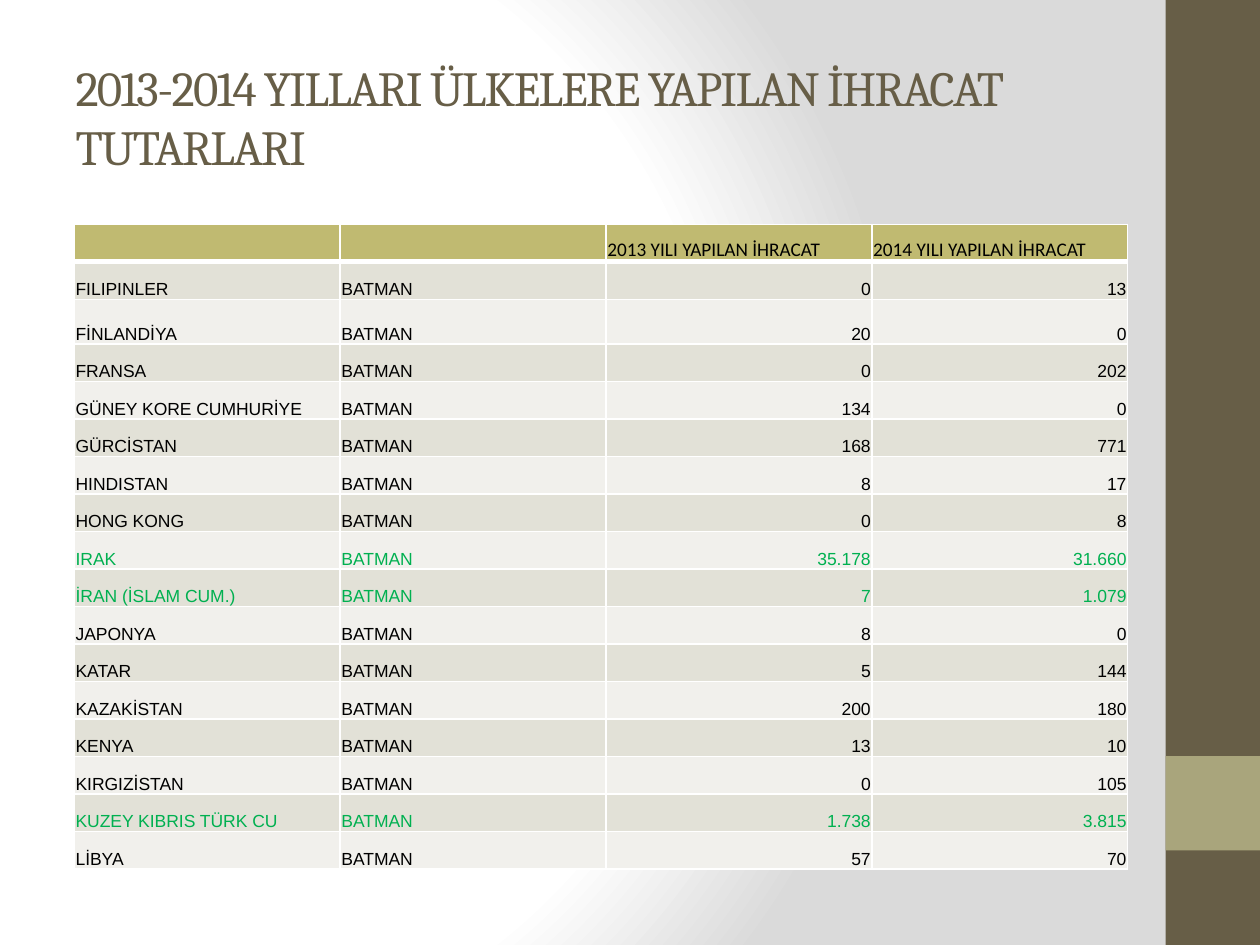
from dataclasses import dataclass

from lxml.etree import SubElement
from pptx import Presentation
from pptx.dml.color import RGBColor
from pptx.enum.shapes import MSO_SHAPE as Shape
from pptx.enum.text import MSO_ANCHOR as Anchor, PP_ALIGN as Align
from pptx.oxml import parse_xml
from pptx.oxml.ns import nsdecls, qn
from pptx.util import Inches, Pt


@dataclass(frozen=True)
class Theme:
    brown: str = "675E47"
    sage: str = "A9A57C"
    header: str = "C0BA71"
    bands: tuple = ("E2E1D7", "F1F0EC")
    white: str = "FFFFFF"
    grey: str = "DADADA"
    text: str = "000000"
    highlight: str = "00B050"
    title_font: str = "Cambria"
    header_font: str = "Calibri"
    body_font: str = "Arial"
    title_size: int = 28
    header_size: int = 11
    body_size: int = 10


class Deck:
    UNIT = 0.25

    def __init__(self, theme):
        self.theme = theme
        self.prs = Presentation()
        self.prs.slide_width, self.prs.slide_height = self.grid(40, 30)
        self.s = self.prs.slides.add_slide(self.prs.slide_layouts[5])

    def grid(self, *units):
        return [Inches(u * self.UNIT) for u in units]

    def font(self, run, name, size, color):
        f = run.font
        f.name, f.size, f.bold = name, Pt(size), False
        f.color.rgb = RGBColor.from_string(color)

    def background(self):
        t = self.theme
        stops = "".join(
            f'<a:gs pos="{pos * 1000}"><a:srgbClr val="{color}"/></a:gs>'
            for pos, color in ((0, t.white), (75, t.white), (100, t.grey)))
        bg = parse_xml(
            f'<p:bg {nsdecls("p", "a")}><p:bgPr><a:gradFill rotWithShape="1">'
            f'<a:gsLst>{stops}</a:gsLst><a:path path="circle">'
            '<a:fillToRect l="20000" t="50000" r="100000" b="50000"/>'
            '</a:path></a:gradFill><a:effectLst/></p:bgPr></p:bg>')
        self.s.element.cSld.insert(0, bg)

    def block(self, box, color):
        sp = self.s.shapes.add_shape(Shape.RECTANGLE, *self.grid(*box))
        sp.shadow.inherit = False
        sp.fill.solid()
        sp.fill.fore_color.rgb = RGBColor.from_string(color)
        sp.line.fill.background()

    def title(self, box, text):
        t = self.theme
        sp = self.s.shapes.title
        sp.left, sp.top, sp.width, sp.height = self.grid(*box)
        tf = sp.text_frame
        tf.text = text
        tf.word_wrap = True
        tf.vertical_anchor = Anchor.MIDDLE
        p = tf.paragraphs[0]
        p.alignment = Align.LEFT
        r = p.runs[0]
        self.font(r, t.title_font, t.title_size, t.brown)
        r.font._element.set("spc", "-100")

    def borders(self, cell, bottom):
        tc_pr = cell._tc.get_or_add_tcPr()
        for side, width in (("L", 1), ("R", 1), ("T", 1), ("B", bottom)):
            ln = SubElement(tc_pr, qn(f"a:ln{side}"), w=str(Pt(width)))
            fill = SubElement(ln, qn("a:solidFill"))
            SubElement(fill, qn("a:srgbClr"), val=self.theme.white)

    def cell(self, cell, text, fill, font, align, bottom=1):
        cell.margin_left = cell.margin_right = cell.margin_top = Inches(0.01)
        cell.margin_bottom = 0
        cell.vertical_anchor = Anchor.BOTTOM
        self.borders(cell, bottom)
        cell.fill.solid()
        cell.fill.fore_color.rgb = RGBColor.from_string(fill)
        p = cell.text_frame.paragraphs[0]
        p.alignment = align
        if text:
            p.text = text
            self.font(p.runs[0], *font)
        else:
            SubElement(p._p, qn("a:endParaRPr"), sz=str(font[1] * 100))

    def table(self, box, widths, heights, header, rows, highlighted):
        t = self.theme
        frame = self.s.shapes.add_table(len(rows) + 1, len(header), *self.grid(*box))
        table = frame.table
        for column, width in zip(table.columns, self.grid(*widths)):
            column.width = width
        for row, height in zip(table.rows, self.grid(*heights)):
            row.height = height
        head_font = (t.header_font, t.header_size, t.text)
        for c, text in enumerate(header):
            self.cell(table.cell(0, c), text, t.header, head_font, Align.LEFT, 3)
        for i, row in enumerate(rows):
            color = t.highlight if row[0] in highlighted else t.text
            font = (t.body_font, t.body_size, color)
            for c, text in enumerate(row):
                align = Align.LEFT if c < 2 else Align.RIGHT
                self.cell(table.cell(i + 1, c), text, t.bands[i % 2], font, align)


PROVINCE = "BATMAN"
EXPORTS = [
    ("FILIPINLER", "0", "13"),
    ("FİNLANDİYA", "20", "0"),
    ("FRANSA", "0", "202"),
    ("GÜNEY KORE CUMHURİYE", "134", "0"),
    ("GÜRCİSTAN", "168", "771"),
    ("HINDISTAN", "8", "17"),
    ("HONG KONG", "0", "8"),
    ("IRAK", "35.178", "31.660"),
    ("İRAN (İSLAM CUM.)", "7", "1.079"),
    ("JAPONYA", "8", "0"),
    ("KATAR", "5", "144"),
    ("KAZAKİSTAN", "200", "180"),
    ("KENYA", "13", "10"),
    ("KIRGIZİSTAN", "0", "105"),
    ("KUZEY KIBRIS TÜRK CU", "1.738", "3.815"),
    ("LİBYA", "57", "70"),
]
HIGHLIGHTED = {"IRAK", "İRAN (İSLAM CUM.)", "KUZEY KIBRIS TÜRK CU"}
HEADER = ["", ""] + [f"{year} YILI YAPILAN İHRACAT" for year in (2013, 2014)]


def main():
    theme = Theme()
    deck = Deck(theme)
    deck.background()
    deck.block((37, 0, 3, 30), theme.brown)
    deck.block((37, 24, 3, 3), theme.sage)
    deck.title((2, 1.2, 33.32, 5), "2013-2014 YILLARI ÜLKELERE YAPILAN İHRACAT TUTARLARI")
    height, tall = 20.48, 1.42
    heights = [(height - tall) / len(EXPORTS)] * (len(EXPORTS) + 1)
    heights[2] = tall
    rows = [(country, PROVINCE, *values) for country, *values in EXPORTS]
    deck.table((2.36, 7.12, 33.44, height), [8.44] * 3 + [8.12], heights,
               HEADER, rows, HIGHLIGHTED)
    deck.prs.save("out.pptx")


if __name__ == "__main__":
    main()
